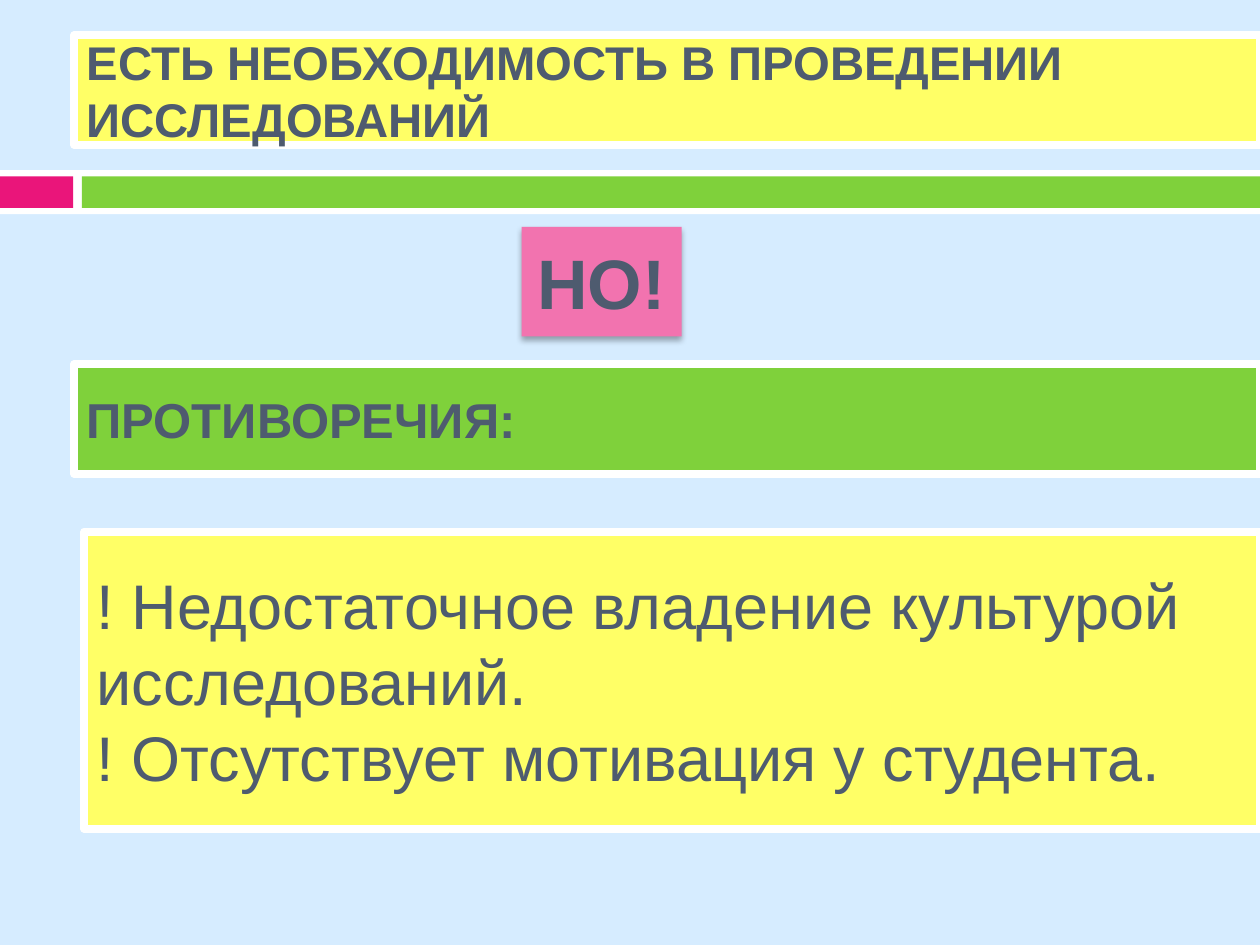
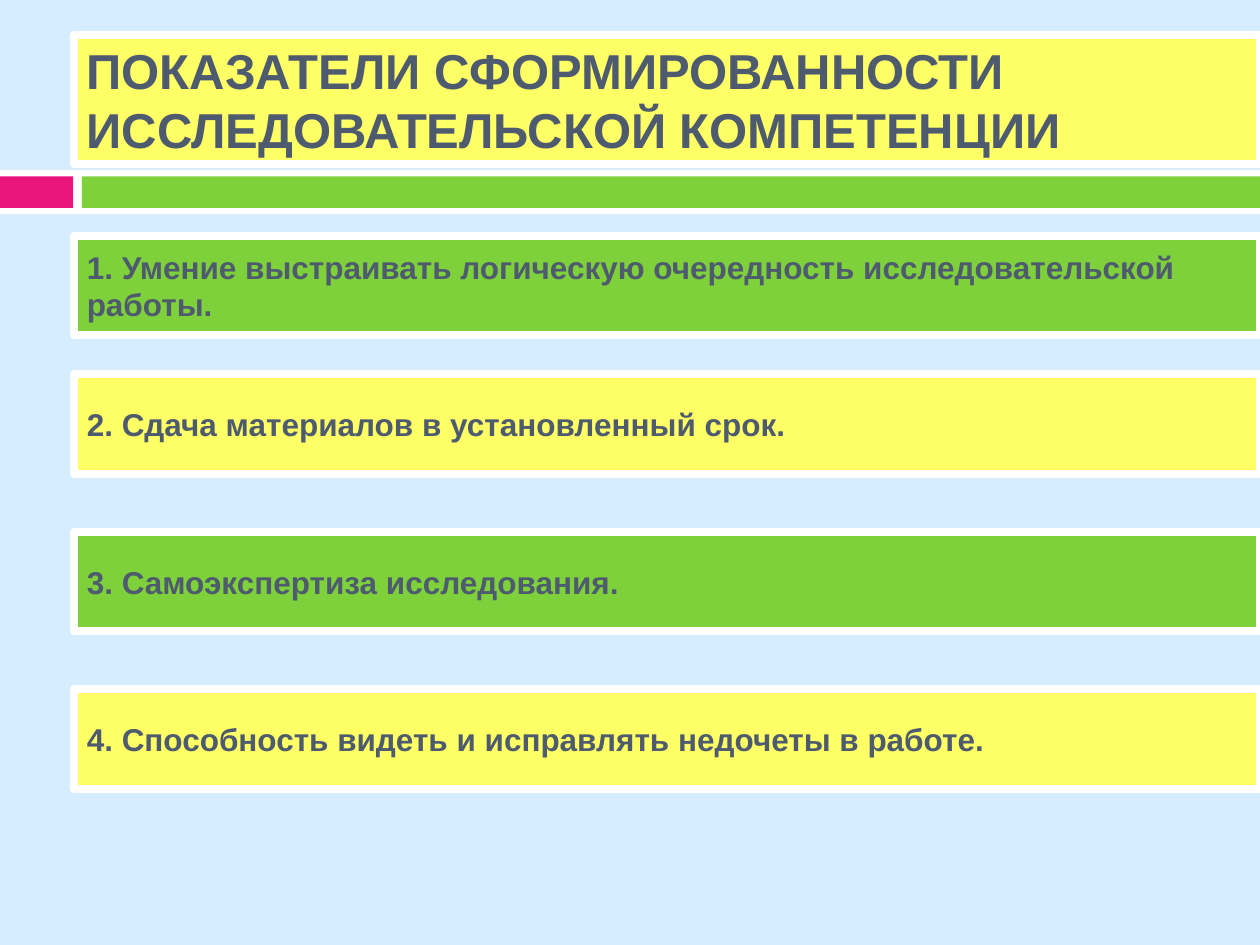
import pptx
import pptx.util
import pptx.dml.color
import pptx.enum.shapes
import pptx.enum.text
import pptx.oxml
import pptx.oxml.ns

HUES = {
    "sky": "D6ECFF",
    "white": "FFFFFF",
    "pink": "EA157A",
    "rose": "F273AF",
    "green": "7FD13B",
    "yellow": "FFFF66",
    "ink": "4E5B6F",
}
FONT = "Arial"

deck = pptx.Presentation()
deck.slide_width = pptx.util.Inches(10)
deck.slide_height = pptx.util.Inches(7.5)
COL = deck.slide_width / 100
ROW = deck.slide_height / 75
EDGE = 5.9


def tint(fill, hue):
    fill.solid()
    fill.fore_color.rgb = pptx.dml.color.RGBColor.from_string(HUES[hue])


def panel(slide, left, top, wide, high, hue, text="", size=18, bold=True, frame=True):
    box = slide.shapes.add_shape(
        pptx.enum.shapes.MSO_SHAPE.RECTANGLE,
        round(left * COL), round(top * ROW), round(wide * COL), round(high * ROW))
    box.shadow.inherit = False
    tint(box.fill, hue)
    if frame:
        tint(box.line.fill, "white")
        box.line.width = pptx.util.Pt(4.5)
    else:
        box.line.fill.background()
    if text:
        body = box.text_frame
        body.word_wrap = True
        body.vertical_anchor = pptx.enum.text.MSO_ANCHOR.MIDDLE
        para = body.paragraphs[0]
        para.text = text
        para.alignment = pptx.enum.text.PP_ALIGN.LEFT
        para.font.name = FONT
        para.font.size = pptx.util.Pt(size)
        para.font.bold = bold
        tint(para.font.fill, "ink")
    return box


tint(deck.slide_master.background.fill, "sky")

titles = [
    ("ЕСТЬ НЕОБХОДИМОСТЬ В ПРОВЕДЕНИИ ИССЛЕДОВАНИЙ", 27, 8.7),
    ("ПОКАЗАТЕЛИ СФОРМИРОВАННОСТИ ИССЛЕДОВАТЕЛЬСКОЙ КОМПЕТЕНЦИИ", 28, 10.2),
]
bands = [
    (0, 13.5, 100, 3.5, "white"),
    (0, 14, 5.8, 2.5, "pink"),
    (6.5, 14, 93.5, 2.5, "green"),
]
slides = []
for title, size, high in titles:
    slide = deck.slides.add_slide(deck.slide_layouts[6])
    for band in bands:
        panel(slide, *band, frame=False)
    panel(slide, EDGE, 2.8, 100 - EDGE, high, "yellow", title, size)
    slides.append(slide)
need, signs = slides

panel(need, 6.7, 42.2, 93.3, 23.6, "yellow",
      "! Недостаточное владение культурой исследований.\v"
      "! Отсутствует мотивация у студента.", 36, bold=False)
panel(need, EDGE, 28.9, 100 - EDGE, 8.7, "green", "ПРОТИВОРЕЧИЯ:", 28)
but = panel(need, 41.4, 18, 12.7, 8.7, "rose", "НО!", 40, frame=False)
but.text_frame.paragraphs[0].alignment = pptx.enum.text.PP_ALIGN.CENTER
glow = but._element.spPr.find(pptx.oxml.ns.qn("a:effectLst"))
glow.append(pptx.oxml.parse_xml(
    f'<a:outerShdw {pptx.oxml.ns.nsdecls("a")} blurRad="{pptx.util.Pt(3.5)}" '
    f'dist="{pptx.util.Pt(2.2)}" dir="5400000" rotWithShape="0">'
    '<a:srgbClr val="000000"><a:alpha val="32000"/></a:srgbClr></a:outerShdw>'))

skills = [
    "Умение выстраивать логическую очередность исследовательской работы.",
    "Сдача материалов в установленный срок.",
    "Самоэкспертиза исследования.",
    "Способность видеть и исправлять недочеты в работе.",
]
tops = [18.7] + [29.7 + 12.5 * step for step in range(3)]
for num, (skill, top) in enumerate(zip(skills, tops), 1):
    hue = "green" if num % 2 else "yellow"
    panel(signs, EDGE, top, 100 - EDGE, 7.9, hue, f"{num}. {skill}")

deck.save("out.pptx")
